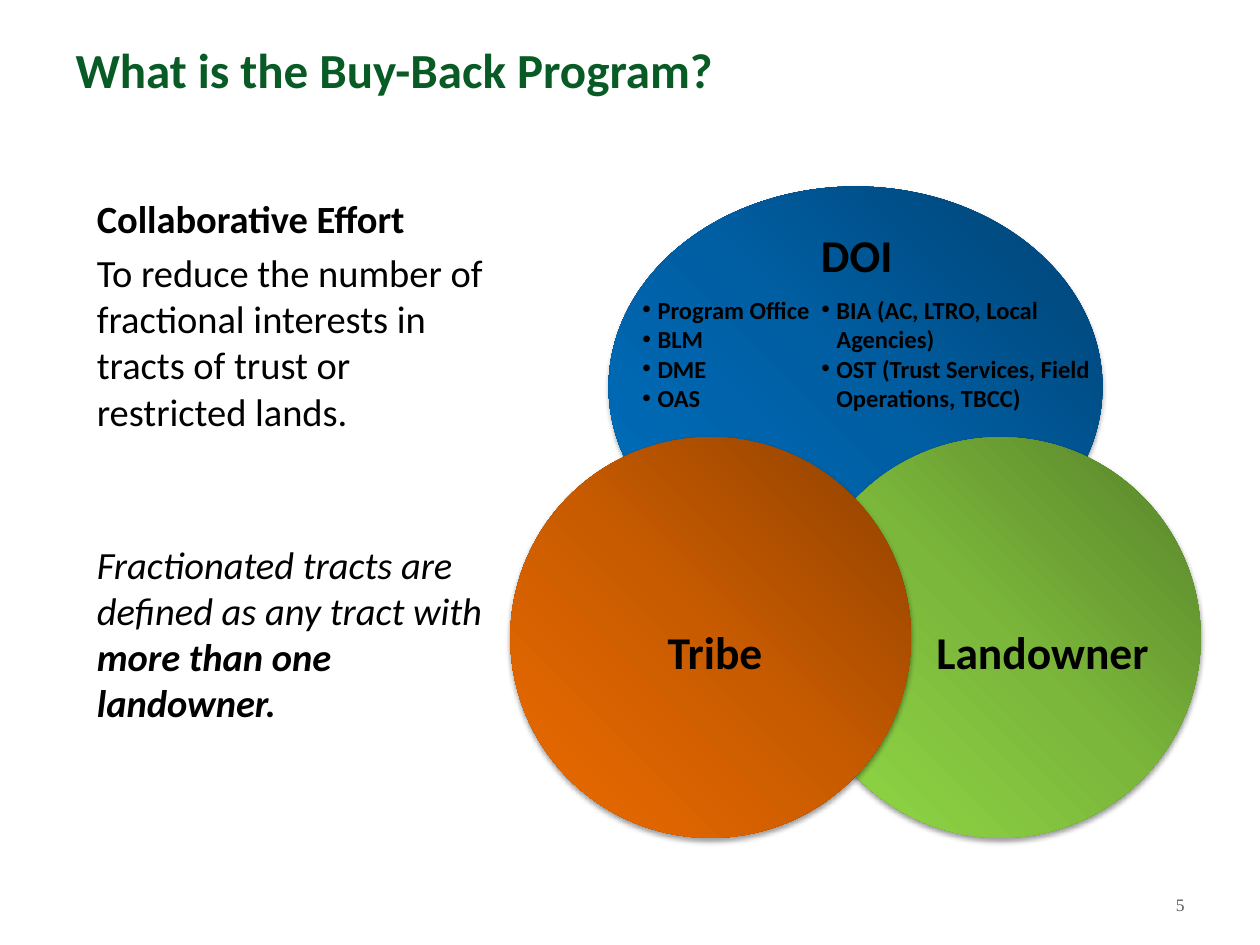
from lxml import etree
from pptx import Presentation
from pptx.dml.color import RGBColor
from pptx.enum.shapes import MSO_SHAPE
from pptx.enum.text import MSO_ANCHOR, PP_ALIGN
from pptx.oxml import parse_xml
from pptx.oxml.ns import nsdecls, qn
from pptx.util import Inches, Pt

OVAL = MSO_SHAPE.OVAL
MIDDLE, TOP = MSO_ANCHOR.MIDDLE, MSO_ANCHOR.TOP
LEFT, CENTER, RIGHT = PP_ALIGN.LEFT, PP_ALIGN.CENTER, PP_ALIGN.RIGHT
TITLE_ONLY = 5

GREEN = RGBColor(0x09, 0x5B, 0x26)
BLACK = RGBColor(0x00, 0x00, 0x00)
GRAY = RGBColor(0x59, 0x59, 0x59)
BLUES = [RGBColor(0x00, 0x42, 0x72), RGBColor(0x00, 0x5E, 0xA2), RGBColor(0x00, 0x70, 0xC0)]
LIMES = [RGBColor(0x57, 0x81, 0x2A), RGBColor(0x7B, 0xB7, 0x3B), RGBColor(0x92, 0xDA, 0x46)]
ORANGES = [RGBColor(0x8D, 0x40, 0x00), RGBColor(0xC8, 0x5B, 0x00), RGBColor(0xEE, 0x6B, 0x00)]


def place(shape, box):
    shape.left, shape.top, shape.width, shape.height = (Inches(length) for length in box)


def add_bullet(para):
    properties = para._p.get_or_add_pPr()
    properties.set("marL", str(Inches(0.12)))
    properties.set("indent", str(-Inches(0.12)))
    etree.SubElement(properties, qn("a:buFont")).set("typeface", "Arial")
    etree.SubElement(properties, qn("a:buChar")).set("char", "•")


def write(para, text, size=22, font="Calibri", color=BLACK, bold=False, italic=False,
          align=LEFT):
    para.alignment = align
    span = para.add_run()
    span.text = text
    span.font.name, span.font.size = font, Pt(size)
    span.font.bold, span.font.italic = bold, italic
    span.font.color.rgb = color


def add_frame(page, box, anchor=TOP, inset=True):
    shape = page.shapes.add_textbox(*(Inches(length) for length in box))
    frame = shape.text_frame
    frame.word_wrap = True
    frame.vertical_anchor = anchor
    if not inset:
        frame.margin_left = frame.margin_right = frame.margin_top = frame.margin_bottom = 0
    return frame


def add_title(page, box, text):
    title = page.shapes.title
    place(title, box)
    title.text_frame.vertical_anchor = MIDDLE
    write(title.text_frame.paragraphs[0], text, size=28, color=GREEN, bold=True)


def add_explanation(page, box):
    frame = add_frame(page, box)
    heading = frame.paragraphs[0]
    write(heading, "Collaborative Effort", bold=True)
    purpose = frame.add_paragraph()
    purpose.space_before = Pt(4.4)
    write(purpose, "To reduce the number of fractional interests in tracts of trust "
                   "or restricted lands.")
    definition = frame.add_paragraph()
    definition.space_before = Pt(61)
    write(definition, "Fractionated tracts are defined as any tract with ", italic=True)
    write(definition, "more than one landowner.", bold=True, italic=True)


def add_circle(page, box, colors):
    """Add an ellipse that shades from top right to bottom left, with a soft shadow."""
    circle = page.shapes.add_shape(OVAL, *(Inches(length) for length in box))
    circle.line.fill.background()
    circle.shadow.inherit = False
    properties = circle._element.spPr
    stops = "".join(f'<a:gs pos="{index * 50000}"><a:srgbClr val="{color}"/></a:gs>'
                    for index, color in enumerate(colors))
    properties.find(qn("a:prstGeom")).addnext(parse_xml(
        f'<a:gradFill {nsdecls("a")} rotWithShape="1"><a:gsLst>{stops}</a:gsLst>'
        '<a:lin ang="8100000" scaled="0"/></a:gradFill>'))
    properties.find(qn("a:effectLst")).append(parse_xml(
        f'<a:outerShdw {nsdecls("a")} blurRad="{Pt(3.1)}" dist="{Pt(1.6)}" dir="5400000" '
        'rotWithShape="0"><a:srgbClr val="000000"><a:alpha val="38000"/></a:srgbClr>'
        '</a:outerShdw>'))


def add_label(page, box, text, **options):
    para = add_frame(page, box, **options).paragraphs[0]
    write(para, text, size=26, bold=True, align=CENTER)


def add_bullets(page, box, items):
    frame = add_frame(page, box)
    for index, item in enumerate(items):
        para = frame.add_paragraph() if index else frame.paragraphs[0]
        add_bullet(para)
        write(para, item, size=14, bold=True)


def add_partners(page, box):
    """Draw the three overlapping partners and their labels."""
    left, top, width, height = box
    diameter = 3.18
    lower = top + height - diameter
    label_top = lower + 0.82
    add_circle(page, (left + 0.78, top, 3.92, diameter), BLUES)
    add_circle(page, (left + width - diameter, lower, diameter, diameter), LIMES)
    add_label(page, (left + 3.27, label_top, 1.91, 1.75), "Landowner", anchor=MIDDLE, inset=False)
    add_circle(page, (left, lower, diameter, diameter), ORANGES)
    add_label(page, (left + 0.67, label_top, 1.91, 1.75), "Tribe", anchor=MIDDLE, inset=False)
    add_bullets(page, (left + 0.95, top + 0.81, 1.75, 1.04),
                ["Program Office", "BLM", "DME", "OAS"])
    add_bullets(page, (left + 2.37, top + 0.81, 2.5, 1.04),
                ["BIA (AC, LTRO, Local Agencies)",
                 "OST (Trust Services, Field Operations, TBCC)"])
    add_label(page, (left + 2.12, top + 0.27, 1.26, 0.54), "DOI")


def add_page_number(page, box, number):
    para = add_frame(page, box, anchor=MIDDLE).paragraphs[0]
    write(para, number, size=10, font="Times New Roman", color=GRAY, align=RIGHT)


def main():
    deck = Presentation()
    deck.slide_width, deck.slide_height = Inches(10), Inches(7.5)
    page = deck.slides.add_slide(deck.slide_layouts[TITLE_ONLY])
    add_title(page, (0.5, -0.08, 9, 1.25), "What is the Buy-Back Program?")
    add_explanation(page, (0.67, 1.5, 3.42, 5))
    add_partners(page, (4.05, 1.48, 5.48, 5.17))
    add_page_number(page, (9.08, 7, 0.42, 0.35), "5")
    deck.save("out.pptx")


if __name__ == "__main__":
    main()
